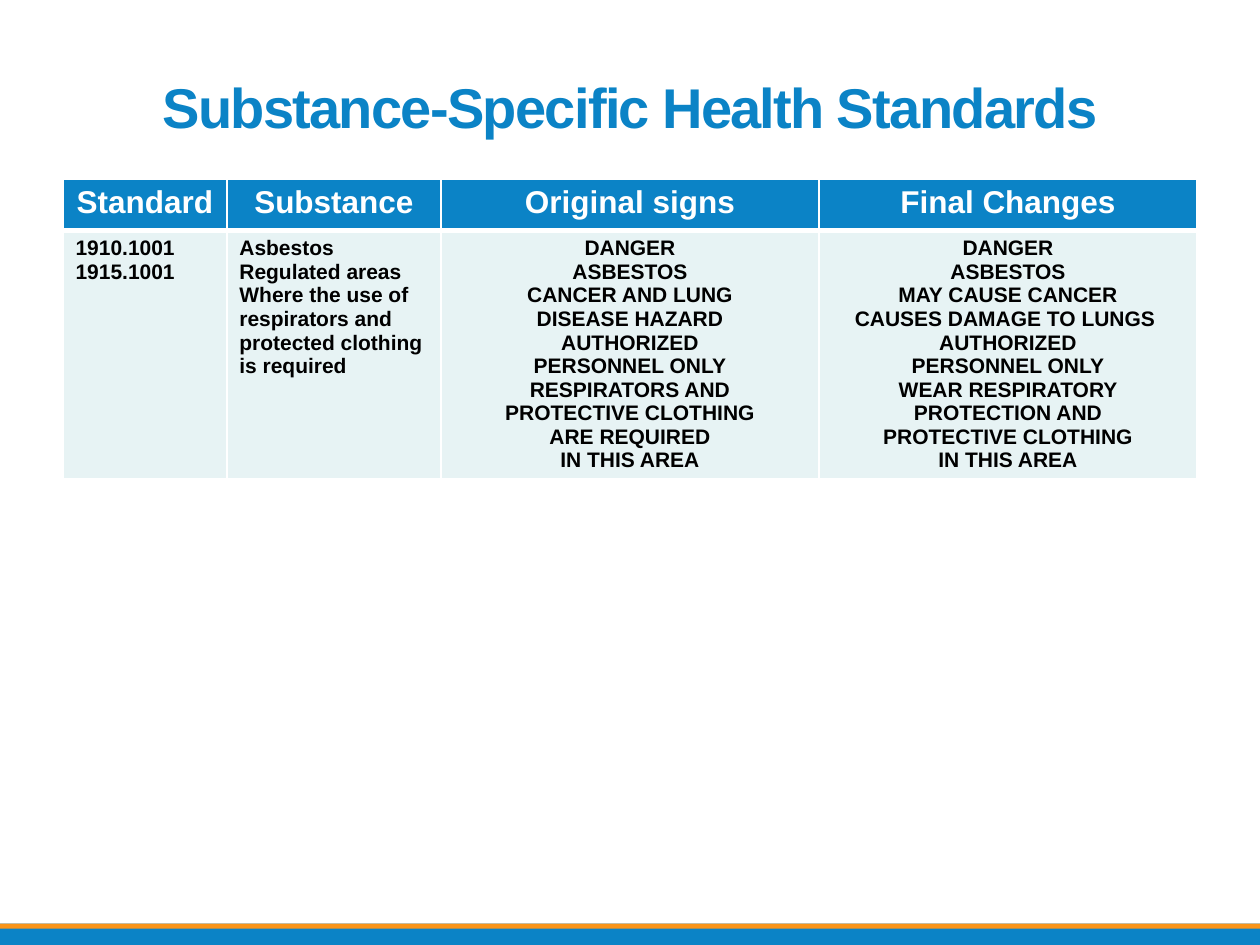
import pptx
import pptx.dml.color
import pptx.enum.shapes
import pptx.enum.text
import pptx.oxml
import pptx.util
from pptx.util import Inches

BLUE, ORANGE, PALE, WHITE, BLACK = "0B83C6", "F99419", "E7F3F4", "FFFFFF", "000000"
CENTER = pptx.enum.text.PP_ALIGN.CENTER
LEFT = pptx.enum.text.PP_ALIGN.LEFT
NAMESPACE = "http://schemas.openxmlformats.org/drawingml/2006/main"


def color(value):
    return pptx.dml.color.RGBColor.from_string(value)


def add_border(cell, side, points):
    """Add a white border; side is L, R, T or B, called in that order before the fill."""
    line = pptx.oxml.parse_xml(
        f'<a:ln{side} xmlns:a="{NAMESPACE}" w="{pptx.util.Pt(points)}">'
        f'<a:solidFill><a:srgbClr val="{WHITE}"/></a:solidFill></a:ln{side}>'
    )
    cell._tc.get_or_add_tcPr().append(line)


deck = pptx.Presentation()
deck.slide_width, deck.slide_height = Inches(10), Inches(7.5)
page = deck.slides.add_slide(deck.slide_layouts[5])

# Footer bars
for height, fill in [(0.17, BLUE), (0.04, ORANGE)]:
    bar = page.shapes.add_shape(
        pptx.enum.shapes.MSO_SHAPE.RECTANGLE,
        Inches(0), Inches(7.33), Inches(10), Inches(height),
    )
    bar.shadow.inherit = False
    bar.fill.solid()
    bar.fill.fore_color.rgb = color(fill)
    bar.line.fill.background()

# Title
title = page.shapes.title
title.left, title.top = Inches(0.5), Inches(0.58)
title.width, title.height = Inches(9), Inches(0.58)
frame = title.text_frame
frame.text = "Substance-Specific Health Standards"
frame.vertical_anchor = pptx.enum.text.MSO_ANCHOR.BOTTOM
frame.paragraphs[0].alignment = CENTER
span = frame.paragraphs[0].runs[0]
span.font.name = "Arial"
span.font.size = pptx.util.Pt(32)
span.font.bold = True
span.font.color.rgb = color(BLUE)
span._r.get_or_add_rPr().set("spc", "-100")

# Table of sign wording
headers = ["Standard", "Substance", "Original signs", "Final Changes"]
details = [
    "1910.1001\n1915.1001",
    "Asbestos\nRegulated areas\n"
    "Where the use of respirators and protected clothing is required",
    "DANGER\nASBESTOS\nCANCER AND LUNG\nDISEASE HAZARD\nAUTHORIZED\nPERSONNEL ONLY\n"
    "RESPIRATORS AND\nPROTECTIVE CLOTHING\nARE REQUIRED\nIN THIS AREA",
    "DANGER\nASBESTOS\vMAY CAUSE CANCER\nCAUSES DAMAGE TO LUNGS \vAUTHORIZED\n"
    "PERSONNEL ONLY\nWEAR RESPIRATORY PROTECTION AND\nPROTECTIVE CLOTHING\nIN THIS AREA",
]
column_widths = [1.3, 1.7, 3, 3]
row_heights = [0.41, 1.95]
# text size, text colour, fill, bottom border
row_styles = [(18, WHITE, BLUE, 3), (12, BLACK, PALE, 1)]

table = page.shapes.add_table(
    2, 4, Inches(0.5), Inches(1.42), Inches(9), Inches(sum(row_heights))
).table
for column, width in zip(table.columns, column_widths):
    column.width = Inches(width)
for row, height in zip(table.rows, row_heights):
    row.height = Inches(height)

for row_index, texts in enumerate([headers, details]):
    size, text_color, fill, bottom = row_styles[row_index]
    for column_index, text in enumerate(texts):
        cell = table.cell(row_index, column_index)
        top = 3 if row_index else 1
        for side, points in [("L", 1), ("R", 1), ("T", top), ("B", bottom)]:
            add_border(cell, side, points)
        cell.fill.solid()
        cell.fill.fore_color.rgb = color(fill)
        cell.text_frame.text = text
        for para in cell.text_frame.paragraphs:
            para.alignment = LEFT if row_index and column_index < 2 else CENTER
            para.font.name = "Arial"
            para.font.size = pptx.util.Pt(size)
            para.font.bold = True
            para.font.color.rgb = color(text_color)

deck.save("out.pptx")
